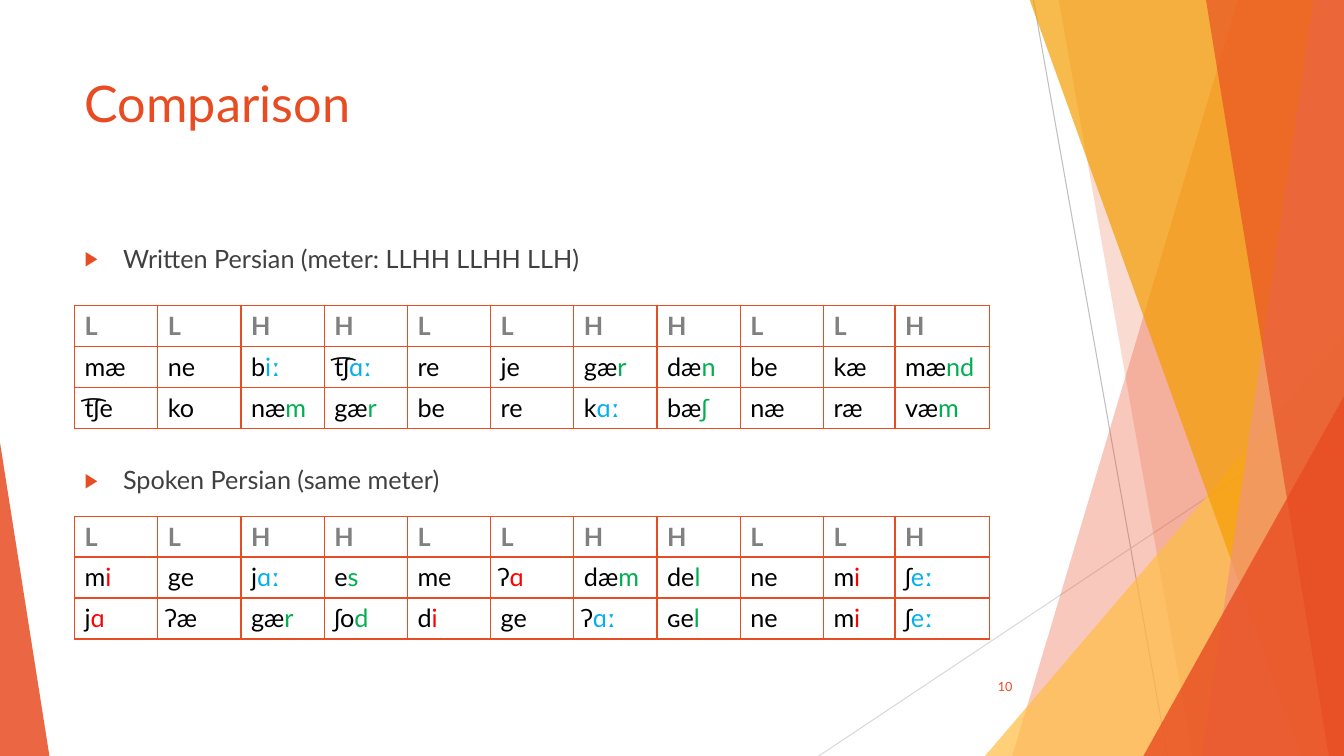
from pptx import Presentation
from pptx.dml.color import RGBColor
from pptx.enum import shapes, text
from pptx.oxml import parse_xml
from pptx.oxml.ns import nsdecls, qn
from pptx.util import Inches, Pt

ORANGE = RGBColor(0xE8, 0x4C, 0x22)
SALMON = RGBColor(0xF1, 0x94, 0x7A)
AMBER = RGBColor(0xF4, 0x9D, 0x00)
YELLOW = RGBColor(0xFF, 0xBD, 0x47)
BLACK = RGBColor(0, 0, 0)
DARK = RGBColor(0x40, 0x40, 0x40)
GRAY = RGBColor(0x80, 0x80, 0x80)
SILVER = RGBColor(0xBF, 0xBF, 0xBF)
PALE = RGBColor(0xD9, 0xD9, 0xD9)
BLUE = RGBColor(0x00, 0xB0, 0xF0)
GREEN = RGBColor(0x00, 0xB0, 0x50)
RED = RGBColor(0xFF, 0, 0)

WIDTH, HEIGHT = 13.33, 7.5
METER = "L L H H L L H H L L H"
# A hyphen separates the plain start of a syllable from its coloured end.
WRITTEN = [
    "mæ ne b-iː t͡ʃ-ɑː re je gæ-r dæ-n be kæ mæ-nd",
    "t͡ʃe ko næ-m gæ-r be re k-ɑː bæ-ʃ næ ræ væ-m",
]
SPOKEN = [
    "m-i ge j-ɑː e-s me ʔ-ɑ dæ-m de-l ne m-i ʃ-eː",
    "j-ɑ ʔæ gæ-r ʃo-d d-i ge ʔ-ɑː ɢe-l ne m-i ʃ-eː",
]


def add_run(p, words, size, color, bold=False):
    r = p.add_run()
    r.text = words
    for name, value in dict(name="Lato", size=Pt(size), bold=bold).items():
        setattr(r.font, name, value)
    r.font.color.rgb = color


def place(sp, box):
    for name, value in zip(("left", "top", "width", "height"), box):
        setattr(sp, name, Inches(value))


def paint(sp, color, opacity):
    """Fill without outline or shadow; opacity is in percent."""
    sp.shadow.inherit = False
    sp.line.fill.background()
    sp.fill.solid()
    sp.fill.fore_color.rgb = color
    clr = sp.fill._xPr.find(qn("a:solidFill"))[0]
    clr.append(parse_xml(f'<a:alpha {nsdecls("a")} val="{opacity * 1000}"/>'))


def add_thin_line(s, start, end, color):
    line = s.shapes.add_connector(shapes.MSO_CONNECTOR.STRAIGHT,
                                  *map(Inches, start + end))
    line.line.color.rgb = color
    line.line.width = Pt(0.75)
    line._element.spPr.append(parse_xml(f'<a:effectLst {nsdecls("a")}/>'))


def add_band(s, top_x, bottom_x, color, opacity):
    """Full-height band from a slanted left edge to the right slide edge."""
    corners = [(top_x, -0.01), (WIDTH, -0.01), (WIDTH, HEIGHT), (bottom_x, HEIGHT)]
    points = [(Inches(x), Inches(y)) for x, y in corners]
    outline = s.shapes.build_freeform(*points[0])
    outline.add_line_segments(points[1:], close=True)
    paint(outline.convert_to_shape(), color, opacity)


def add_corner(s, left, top, width, apex, color, opacity):
    """Triangle standing on the bottom slide edge; apex 0 is left, 1 right."""
    sp = s.shapes.add_shape(shapes.MSO_SHAPE.ISOSCELES_TRIANGLE,
                            *map(Inches, (left, top, width, HEIGHT - top)))
    sp.adjustments[0] = apex
    paint(sp, color, opacity)


def add_decoration(s):
    add_thin_line(s, (10.25, 0), (11.58, HEIGHT), SILVER)
    add_thin_line(s, (WIDTH, 4.03), (8.12, HEIGHT), PALE)
    add_band(s, 12.28, 10.04, ORANGE, 30)
    add_band(s, 10.5, 11.83, ORANGE, 20)
    add_corner(s, 9.77, 3.33, 3.56, 1, YELLOW, 72)
    add_band(s, 10.21, 12.91, AMBER, 70)
    add_band(s, 13.03, 11.92, SALMON, 70)
    add_band(s, 11.96, 13.18, ORANGE, 65)
    add_corner(s, 11.34, 3.93, 1.99, 1, ORANGE, 80)
    add_corner(s, 0, 4.39, 0.49, 0, ORANGE, 85)


def format_frame(tf, anchor):
    for name, value in dict(word_wrap=True, vertical_anchor=anchor,
                            auto_size=text.MSO_AUTO_SIZE.NONE).items():
        setattr(tf, name, value)


def fill_title(sp, box, words):
    place(sp, box)
    format_frame(sp.text_frame, text.MSO_ANCHOR.TOP)
    p = sp.text_frame.paragraphs[0]
    p.alignment = text.PP_ALIGN.LEFT
    add_run(p, words, 36, ORANGE)


def fill_body(sp, box, headings):
    """Bulleted headings; each gap leaves room for the table below a heading."""
    place(sp, box)
    tf = sp.text_frame
    format_frame(tf, text.MSO_ANCHOR.TOP)
    for i, words in enumerate(headings):
        p = tf.add_paragraph() if i else tf.paragraphs[0]
        p.space_before = Pt(136.4 if i else 10)
        pPr = p._p.get_or_add_pPr()
        pPr.set("marL", str(Inches(0.38)))
        pPr.set("indent", str(-Inches(0.38)))
        for tag in (f'buClr {nsdecls("a")}><a:srgbClr val="{ORANGE}"/></a:buClr',
                    f'buSzPct {nsdecls("a")} val="80000"/',
                    f'buFont {nsdecls("a")} typeface="Lato"/',
                    f'buChar {nsdecls("a")} char="▶"/'):
            pPr.append(parse_xml(f"<a:{tag}>"))
        add_run(p, words, 18, DARK)


def ending_color(ending):
    """Long vowels are blue, full vowels red, closing consonants green."""
    if ending.endswith("ː"):
        return BLUE
    return RED if ending in ("i", "ɑ") else GREEN


def add_borders(cell):
    tcPr = cell._tc.get_or_add_tcPr()
    for i, side in enumerate(("lnL", "lnR", "lnT", "lnB")):
        tcPr.insert(i, parse_xml(
            f'<a:{side} {nsdecls("a")} w="{Pt(1)}"><a:solidFill>'
            f'<a:srgbClr val="{ORANGE}"/></a:solidFill></a:{side}>'))


def add_meter_table(s, box, verses):
    rows = [line.split() for line in [METER] + verses]
    count = len(rows[0])
    table = s.shapes.add_table(len(rows), count, *map(Inches, box)).table
    table.first_row = table.horz_banding = False
    last_widths = [0.71, 0.94]
    equal = (box[2] - sum(last_widths)) / (count - len(last_widths))
    widths = [equal] * (count - len(last_widths)) + last_widths
    for column, width in zip(table.columns, widths):
        column.width = Inches(width)
    for i, row in enumerate(rows):
        table.rows[i].height = Inches(box[3] / len(rows))
        for j, syllable in enumerate(row):
            cell = table.cell(i, j)
            cell.fill.background()
            add_borders(cell)
            p = cell.text_frame.paragraphs[0]
            start, _, ending = syllable.partition("-")
            add_run(p, start, 18, BLACK if i else GRAY, bold=i == 0)
            if ending:
                add_run(p, ending, 18, ending_color(ending))


def add_page_number(s, box, number):
    tf = s.shapes.add_textbox(*map(Inches, box)).text_frame
    format_frame(tf, text.MSO_ANCHOR.MIDDLE)
    p = tf.paragraphs[0]
    p.alignment = text.PP_ALIGN.RIGHT
    add_run(p, number, 9, ORANGE)


def main():
    prs = Presentation()
    prs.slide_width, prs.slide_height = Inches(WIDTH), Inches(HEIGHT)
    s = prs.slides.add_slide(prs.slide_layouts[1])
    add_decoration(s)
    fill_title(s.shapes.title, (0.74, 0.67, 9.4, 1.44), "Comparison")
    fill_body(s.placeholders[1], (0.74, 2.36, 9.4, 4.24),
              ["Written Persian (meter: LLHH LLHH LLH)",
               "Spoken Persian (same meter)"])
    for top, verses in ((3.03, WRITTEN), (5.12, SPOKEN)):
        add_meter_table(s, (0.74, top, 9.08, 1.22), verses)
    add_page_number(s, (9.39, 6.61, 0.75, 0.4), "10")
    prs.save("out.pptx")


if __name__ == "__main__":
    main()
